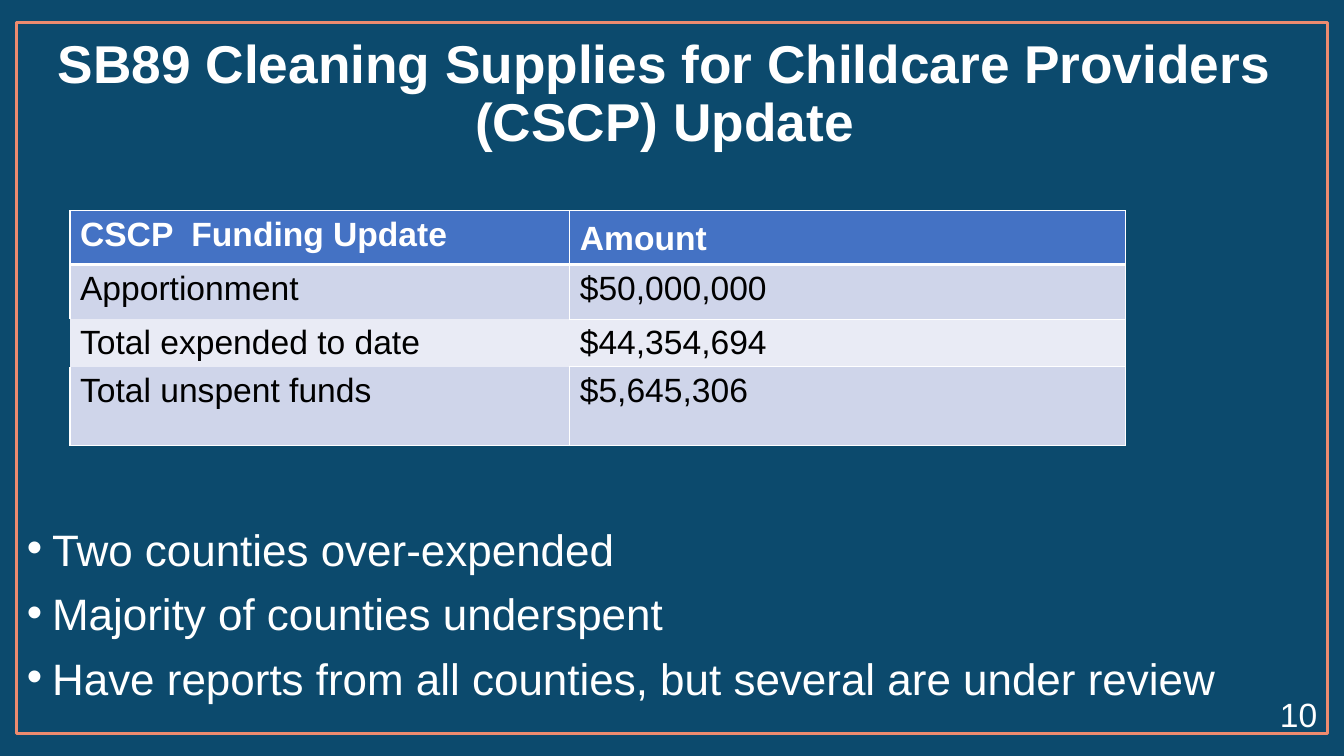
from dataclasses import dataclass

from lxml.etree import SubElement
from pptx import Presentation
from pptx.dml.color import RGBColor
from pptx.enum.shapes import MSO_SHAPE
from pptx.enum.text import MSO_ANCHOR, MSO_AUTO_SIZE, PP_ALIGN
from pptx.oxml.ns import qn
from pptx.util import Pt


@dataclass(frozen=True)
class Theme:
    background: str = "0C4A6D"
    frame: str = "ED8B6F"
    header: str = "4472C4"
    band_dark: str = "CFD5EA"
    band_light: str = "E9EBF5"
    white: str = "FFFFFF"
    black: str = "000000"
    font: str = "Arial"
    title_size: float = 38
    table_size: float = 24
    bullet_size: float = 31.4


theme = Theme()


def format_runs(paragraph, size, color, bold=False):
    for run in paragraph.runs:
        run.font.name = theme.font
        run.font.size = Pt(size)
        run.font.bold = bold
        run.font.color.rgb = RGBColor.from_string(color)


def set_borders(cell, widths):
    """Draw white cell borders; widths maps a side (L, R, T, B) to points."""
    properties = cell._tc.get_or_add_tcPr()
    for position, side in enumerate("LRTB"):
        line = SubElement(properties, qn(f"a:ln{side}"))
        properties.insert(position, line)
        if side in widths:
            line.set("w", str(Pt(widths[side])))
            fill = SubElement(line, qn("a:solidFill"))
            SubElement(fill, qn("a:srgbClr")).set("val", theme.white)
        else:
            SubElement(line, qn("a:noFill"))


presentation = Presentation()
presentation.slide_width, presentation.slide_height = Pt(960), Pt(540)
slide = presentation.slides.add_slide(presentation.slide_layouts[1])
slide.background.fill.solid()
slide.background.fill.fore_color.rgb = RGBColor.from_string(theme.background)

frame_left, frame_top, frame_width, frame_height = Pt(12), Pt(16), Pt(936), Pt(508)

# Frame
frame = slide.shapes.add_shape(
    MSO_SHAPE.RECTANGLE, frame_left, frame_top, frame_width, frame_height)
frame.shadow.inherit = False
frame.fill.background()
frame.line.color.rgb = RGBColor.from_string(theme.frame)
frame.line.width = Pt(2)

# Title
title = slide.shapes.title
title.left, title.top, title.width, title.height = frame_left, frame_top, frame_width, Pt(104)
title.text_frame.text = "SB89 Cleaning Supplies for Childcare Providers \v(CSCP) Update "
title.text_frame.auto_size = MSO_AUTO_SIZE.NONE
title.text_frame.vertical_anchor = MSO_ANCHOR.MIDDLE
heading = title.text_frame.paragraphs[0]
heading.alignment = PP_ALIGN.CENTER
heading.line_spacing = 0.9
format_runs(heading, theme.title_size, theme.white, bold=True)

# Funding table: first text, second text, row height, fill, bordered sides of each cell
funding_rows = [
    ("CSCP  Funding Update", "Amount", 38.5, theme.header, ("LRTB", "LRTB")),
    ("Apportionment", "$50,000,000", 39, theme.band_dark, ("LRT", "LRTB")),
    ("Total expended to date", "$44,354,694", 34, theme.band_light, ("", "RTB")),
    ("Total unspent funds", "$5,645,306", 56, theme.band_dark, ("LRB", "LRTB")),
]
column_widths = (357, 397)
table = slide.shapes.add_table(
    len(funding_rows), len(column_widths), Pt(50), Pt(150.5),
    Pt(sum(column_widths)), Pt(sum(row[2] for row in funding_rows))).table
for column, width in zip(table.columns, column_widths):
    column.width = Pt(width)
for row_index, (label, amount, height, fill, borders) in enumerate(funding_rows):
    table.rows[row_index].height = Pt(height)
    is_header = row_index == 0
    for column_index, text in enumerate((label, amount)):
        cell = table.cell(row_index, column_index)
        cell.text_frame.text = text
        cell.fill.solid()
        cell.fill.fore_color.rgb = RGBColor.from_string(fill)
        format_runs(cell.text_frame.paragraphs[0], theme.table_size,
                    theme.white if is_header else theme.black, bold=is_header)
        set_borders(cell, {side: 3 if is_header and side == "B" else 1
                           for side in borders[column_index]})
table.cell(0, 1).margin_top = Pt(7)

# Findings
findings = [
    "Two counties over-expended",
    "Majority of counties underspent",
    "Have reports from all counties, but several are under review",
]
body = slide.placeholders[1]
body.left, body.top, body.width, body.height = frame_left, Pt(365), frame_width, Pt(140.5)
body.text_frame.text = "\n".join(findings)
body.text_frame.auto_size = MSO_AUTO_SIZE.NONE
body.text_frame.vertical_anchor = MSO_ANCHOR.BOTTOM
for paragraph in body.text_frame.paragraphs:
    paragraph.line_spacing = 0.7
    paragraph.space_before = Pt(19.5)
    paragraph_properties = paragraph._p.get_or_add_pPr()
    paragraph_properties.set("marL", str(Pt(18)))
    paragraph_properties.set("indent", str(Pt(-18)))
    format_runs(paragraph, theme.bullet_size, theme.white)

# Slide number
number_box = slide.shapes.add_textbox(Pt(732), Pt(495.5), Pt(216), Pt(29))
number_box.text_frame.word_wrap = True
number_box.text_frame.vertical_anchor = MSO_ANCHOR.MIDDLE
number_box.text_frame.text = "10"
number = number_box.text_frame.paragraphs[0]
number.alignment = PP_ALIGN.RIGHT
format_runs(number, theme.table_size, theme.white)

presentation.save("out.pptx")
